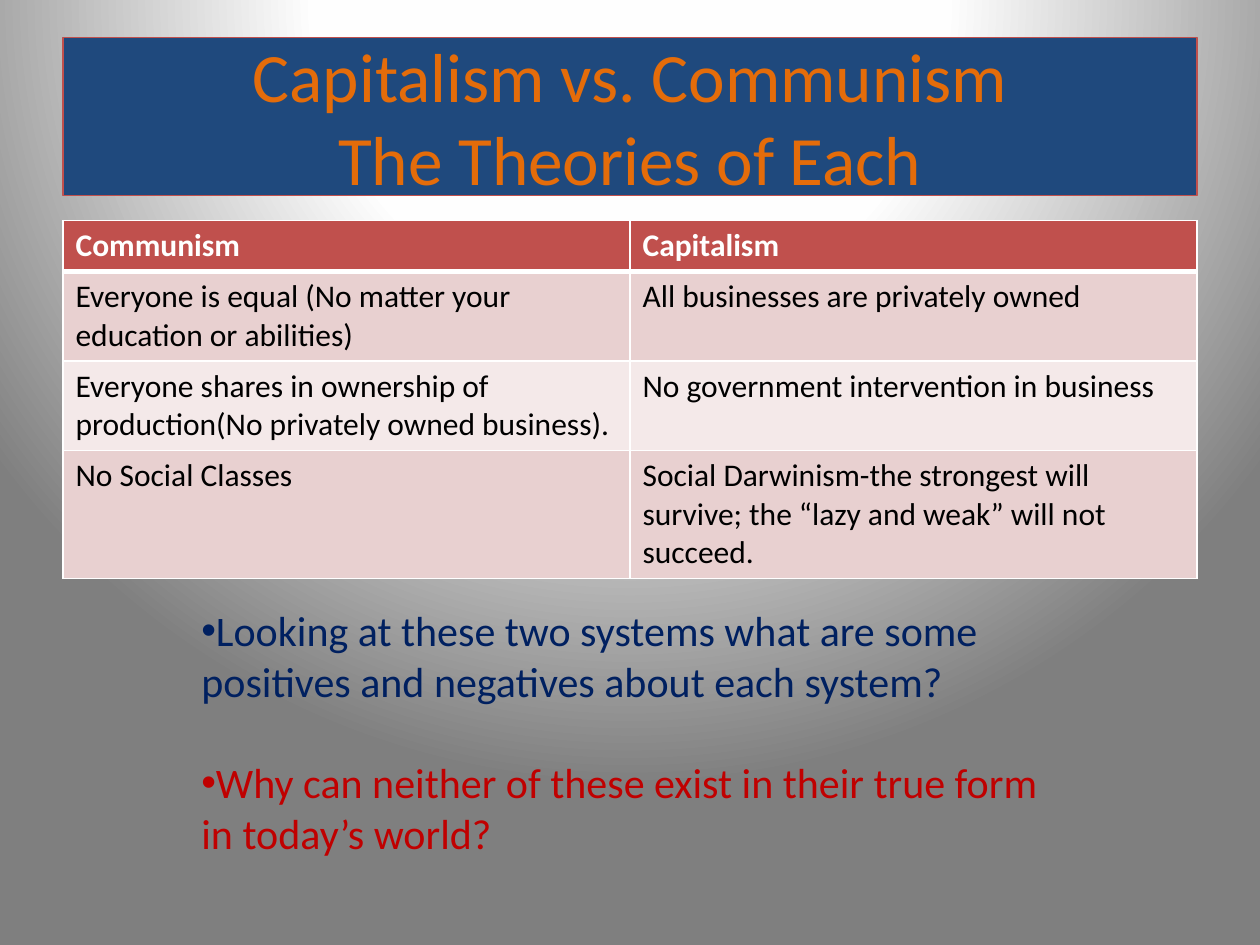
from pptx import Presentation
from pptx.dml.color import RGBColor
from pptx.enum.shapes import MSO_SHAPE
from pptx.enum.text import MSO_ANCHOR, PP_ALIGN
from pptx.oxml import parse_xml
from pptx.oxml.ns import nsdecls
from pptx.util import Pt

RECT = MSO_SHAPE.RECTANGLE
MIDDLE = MSO_ANCHOR.MIDDLE
CENTER = PP_ALIGN.CENTER
FONT = "Calibri"

# Content
TITLE = "Capitalism vs. Communism\vThe Theories of Each"
ROWS = [
    ("Communism", "Capitalism"),
    ("Everyone is equal (No matter your education or abilities)",
     "All businesses are privately owned"),
    ("Everyone shares in ownership of production(No privately owned business).",
     "No government intervention in business"),
    ("No Social Classes",
     "Social Darwinism-the strongest will survive; the “lazy and weak” will not succeed."),
]
QUESTIONS = [
    ("Looking at these two systems what are some positives and negatives about each system?",
     "002060"),
    ("Why can neither of these exist in their true form in today’s world?", "C00000"),
]
HEADER_FILL = "C0504D"
BAND_FILLS = ["E8D0D0", "F4E9E9"]
BACKGROUND_STOPS = [(0, "FFFFFF"), (40, "FEFEFE"), (100, "7F7F7F")]

LEFT, WIDTH = 36, 648
ROW_HEIGHT = 29.2


def rgb(value):
    return RGBColor.from_string(value)


def style(p, size, color, bold=False):
    for r in p.runs:
        r.font.name = FONT
        r.font.size = Pt(size)
        r.font.bold = bold
        r.font.color.rgb = rgb(color)


def set_background(s):
    s.background.fill.solid()
    solid = s.element.xpath(".//p:bgPr/a:solidFill")[0]
    stops = "".join(
        f'<a:gs pos="{pos * 1000}"><a:srgbClr val="{color}"/></a:gs>'
        for pos, color in BACKGROUND_STOPS)
    solid.getparent().replace(solid, parse_xml(
        f'<a:gradFill {nsdecls("a")} rotWithShape="1"><a:gsLst>{stops}</a:gsLst>'
        '<a:path path="circle">'
        '<a:fillToRect l="50000" t="-80000" r="50000" b="180000"/>'
        '</a:path></a:gradFill>'))


def set_borders(cell, top, bottom):
    tc_pr = cell._tc.get_or_add_tcPr()
    widths = {"L": 1, "R": 1, "T": top, "B": bottom}
    for i, (side, width) in enumerate(widths.items()):
        tc_pr.insert(i, parse_xml(
            f'<a:ln{side} {nsdecls("a")} w="{Pt(width)}"><a:solidFill>'
            f'<a:srgbClr val="FFFFFF"/></a:solidFill></a:ln{side}>'))


prs = Presentation()
prs.slide_width, prs.slide_height = Pt(720), Pt(540)
s = prs.slides.add_slide(prs.slide_layouts[6])
set_background(s)

# Title banner
sp = s.shapes.add_shape(RECT, Pt(LEFT), Pt(21.6), Pt(WIDTH), Pt(90))
sp.shadow.inherit = False
sp.fill.solid()
sp.fill.fore_color.rgb = rgb("1F497D")
sp.line.color.rgb = rgb("C0504D")
sp.line.width = Pt(0.75)
tf = sp.text_frame
tf.word_wrap = True
tf.vertical_anchor = MIDDLE
p = tf.paragraphs[0]
p.text = TITLE
p.alignment = CENTER
style(p, 39.6, "E46C0A")

# Comparison table
table = s.shapes.add_table(len(ROWS), 2, Pt(LEFT), Pt(126), Pt(WIDTH),
                           Pt(ROW_HEIGHT * len(ROWS))).table
for i, row in enumerate(ROWS):
    header = i == 0
    table.rows[i].height = Pt(ROW_HEIGHT)
    for j, text in enumerate(row):
        cell = table.cell(i, j)
        cell.text = text
        style(cell.text_frame.paragraphs[0], 18,
              "FFFFFF" if header else "000000", header)
        cell.fill.solid()
        cell.fill.fore_color.rgb = rgb(HEADER_FILL if header else BAND_FILLS[(i - 1) % 2])
        set_borders(cell, top=3 if i == 1 else 1, bottom=3 if header else 1)

# Discussion questions
tf = s.shapes.add_textbox(Pt(108), Pt(342), Pt(498), Pt(174)).text_frame
tf.word_wrap = True
for i, (text, color) in enumerate(QUESTIONS):
    p = tf.add_paragraph() if i else tf.paragraphs[0]
    p.text = text
    p.space_before = Pt(29.3 if i else 0)
    style(p, 24, color)
    p_pr = p._p.get_or_add_pPr()
    p_pr.append(parse_xml(f'<a:buFont {nsdecls("a")} typeface="Arial"/>'))
    p_pr.append(parse_xml(f'<a:buChar {nsdecls("a")} char="•"/>'))

prs.save("out.pptx")
